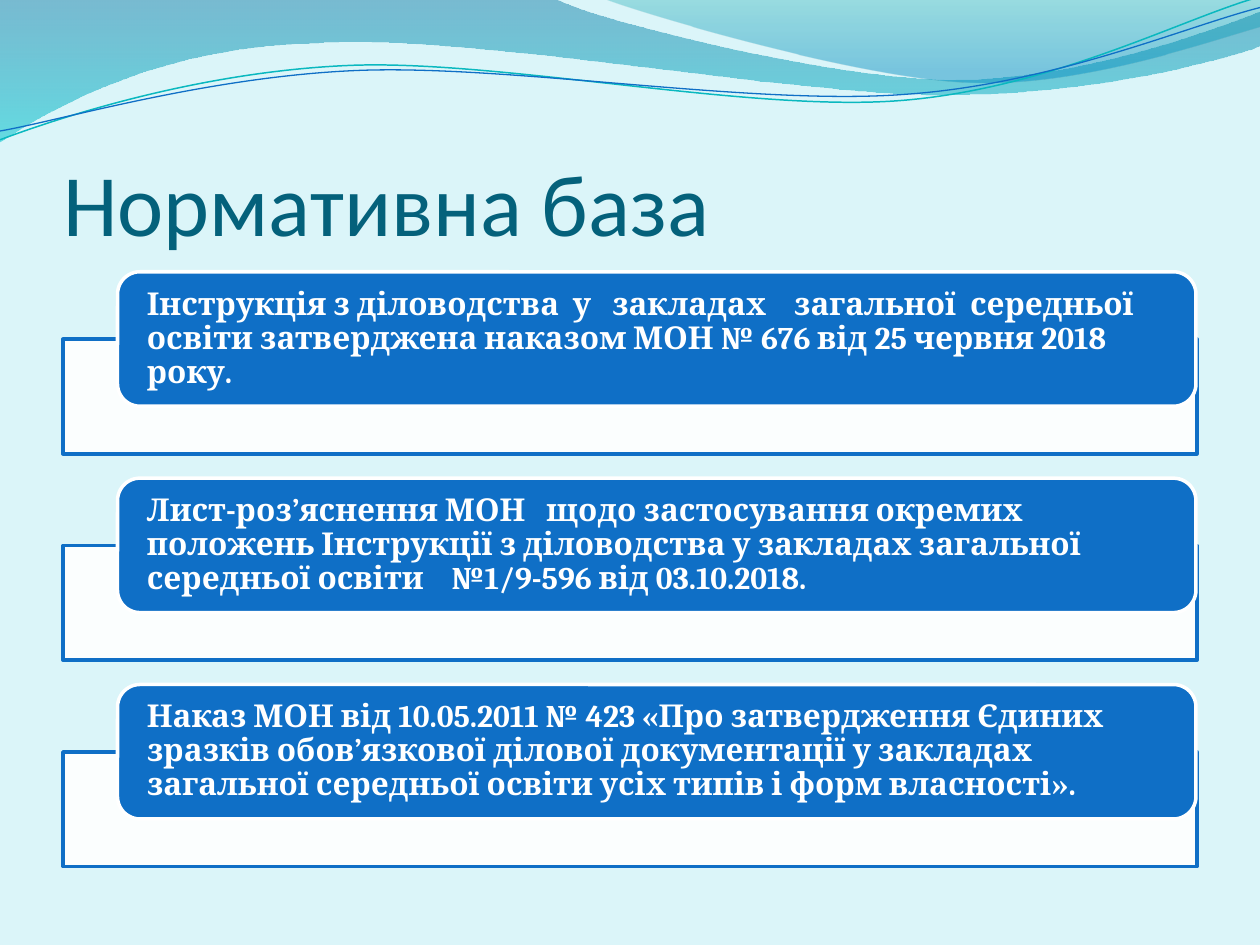
from lxml.etree import SubElement
from pptx import Presentation
from pptx.dml.color import RGBColor
from pptx.enum.shapes import MSO_SHAPE
from pptx.enum.text import MSO_ANCHOR, MSO_AUTO_SIZE, PP_ALIGN
from pptx.oxml.ns import qn
from pptx.util import Cm, Pt

COLORS = {
    "background": "DBF5F9",
    "title": "04617B",
    "blue": "0F6FC6",
    "teal": "0AB8BF",
    "white": "FFFFFF",
    "wave_top": "0074A1",
    "wave_bottom": "00C6CF",
    "crest_top": "00A1A9",
    "crest_bottom": "008BBF",
}
RGB = {name: RGBColor.from_string(value) for name, value in COLORS.items()}
CM_PER_INCH = 2.54


def write_text(shape, text, font="Calibri", size=18, color="white", bold=False,
               anchor=MSO_ANCHOR.MIDDLE, spacing=1.0, margins=(0, 0, 0, 0)):
    frame = shape.text_frame
    frame.word_wrap = True
    frame.auto_size = MSO_AUTO_SIZE.NONE
    frame.vertical_anchor = anchor
    frame.margin_left, frame.margin_top, frame.margin_right, frame.margin_bottom = map(Cm, margins)
    para = frame.paragraphs[0]
    para.alignment = PP_ALIGN.LEFT
    para.line_spacing = spacing
    span = para.add_run()
    span.text = text
    span.font.name = font
    span.font.size = Pt(size)
    span.font.bold = bold
    span.font.color.rgb = RGB[color]


def draw_outline(page, start, segments, close):
    points = [start]
    for segment in segments:
        points.extend(zip(segment[::2], segment[1::2]))
    points = [(Cm(x * CM_PER_INCH), Cm(y * CM_PER_INCH)) for x, y in points]
    builder = page.shapes.build_freeform(*points[0])
    builder.add_line_segments(points[1:], close=close)
    shape = builder.convert_to_shape()
    shape.shadow.inherit = False
    outline = next(shape.element.spPr.iter(qn("a:path")))
    lines = iter(outline.findall(qn("a:lnTo")))
    for segment in segments:
        steps = [next(lines) for _ in segment[::2]]
        if len(steps) == 3:
            curve = SubElement(outline, qn("a:cubicBezTo"))
            steps[0].addprevious(curve)
            for step in steps:
                curve.append(step[0])
                outline.remove(step)
    return shape


deck = Presentation()
deck.slide_width = Cm(25.4)
deck.slide_height = Cm(19.05)
page = deck.slides.add_slide(deck.slide_layouts[5])
page.background.fill.solid()
page.background.fill.fore_color.rgb = RGB["background"]

waves = [
    ((0, 0), [(4.4, -0.01), (4.76, 0.17, 6.64, 0.63, 7.58, 0.63),
              (8.53, 0.63, 9.58, 0.26, 10, 0.09), (10.01, 0.36),
              (9.83, 0.44, 8.7, 0.76, 7.46, 0.75),
              (6.22, 0.75, 3.82, 0.28, 2.57, 0.34),
              (1.29, 0.36, 0.46, 0.83, -0.01, 1.13), (0, 0)],
     [("wave_top", 0, 45), ("wave_bottom", 1, 55)]),
    ((4.79, -0.01), [(5.09, 0.11, 6.82, 0.62, 7.69, 0.65),
                     (8.56, 0.69, 9.61, 0.32, 10, 0.21), (10, 0), (4.79, -0.01)],
     [("crest_top", 0, 30), ("crest_bottom", 0.8, 45)]),
]
for start, segments, stops in waves:
    wave = draw_outline(page, start, segments, close=True)
    wave.line.fill.background()
    wave.fill.gradient()
    wave.fill.gradient_angle = 270
    for stop, (color, position, opacity) in zip(wave.fill.gradient_stops, stops):
        stop.color.rgb = RGB[color]
        stop.position = position
    for node, (color, position, opacity) in zip(wave.element.spPr.iter(qn("a:srgbClr")), stops):
        SubElement(node, qn("a:alpha"), val=str(opacity * 1000))

strands = [
    ((0, 1.11), [(0.48, 0.93, 1.58, 0.57, 2.77, 0.52),
                 (3.95, 0.47, 5.93, 0.89, 7.13, 0.8),
                 (8.33, 0.71, 9.38, 0.15, 9.98, -0.02)], "teal", 0.85),
    ((0, 1.04), [(0.47, 0.96, 1.64, 0.61, 2.83, 0.56),
                 (4.03, 0.51, 5.97, 0.84, 7.17, 0.75),
                 (8.36, 0.67, 9.41, 0.21, 10, 0.06)], "blue", 0.75),
]
for start, segments, color, width in strands:
    strand = draw_outline(page, start, segments, close=False)
    strand.fill.background()
    strand.line.color.rgb = RGB[color]
    strand.line.width = Pt(width)

title = page.shapes.title
title.left, title.top, title.width, title.height = Cm(1.27), Cm(1.95), Cm(22.86), Cm(3.17)
write_text(title, "Нормативна база", size=50, color="title",
           anchor=MSO_ANCHOR.BOTTOM, margins=(0, 0.13, 0, 0))

documents = [
    "Інструкція з діловодства  у   закладах    загальної  середньої  освіти затверджена "
    "наказом МОН № 676 від 25 червня 2018 року.",
    "Лист-роз’яснення МОН   щодо застосування окремих положень Інструкції з діловодства "
    "у закладах загальної середньої освіти    №1/9-596 від 03.10.2018.",
    "Наказ МОН від 10.05.2011 № 423 «Про затвердження Єдиних зразків обов’язкової ділової "
    "документації у закладах загальної середньої освіти усіх типів і форм власності».",
]
for index, document in enumerate(documents):
    top = 5.48 + index * 4.16
    frame_box = page.shapes.add_shape(MSO_SHAPE.RECTANGLE, Cm(1.27), Cm(top + 1.36),
                                      Cm(22.86), Cm(2.31))
    label_box = page.shapes.add_shape(MSO_SHAPE.ROUNDED_RECTANGLE, Cm(2.37), Cm(top),
                                      Cm(21.74), Cm(2.71))
    for box, fill, line in ((frame_box, "white", "blue"), (label_box, "blue", "white")):
        box.shadow.inherit = False
        box.fill.solid()
        box.fill.fore_color.rgb = RGB[fill]
        box.line.color.rgb = RGB[line]
        box.line.width = Pt(2)
    fill_node = next(frame_box.element.spPr.iter(qn("a:srgbClr")))
    SubElement(fill_node, qn("a:alpha"), val="90000")
    write_text(label_box, document, font="Cambria", bold=True, spacing=0.9,
               margins=(0.46, 0, 0.46, 0))

deck.save("out.pptx")
